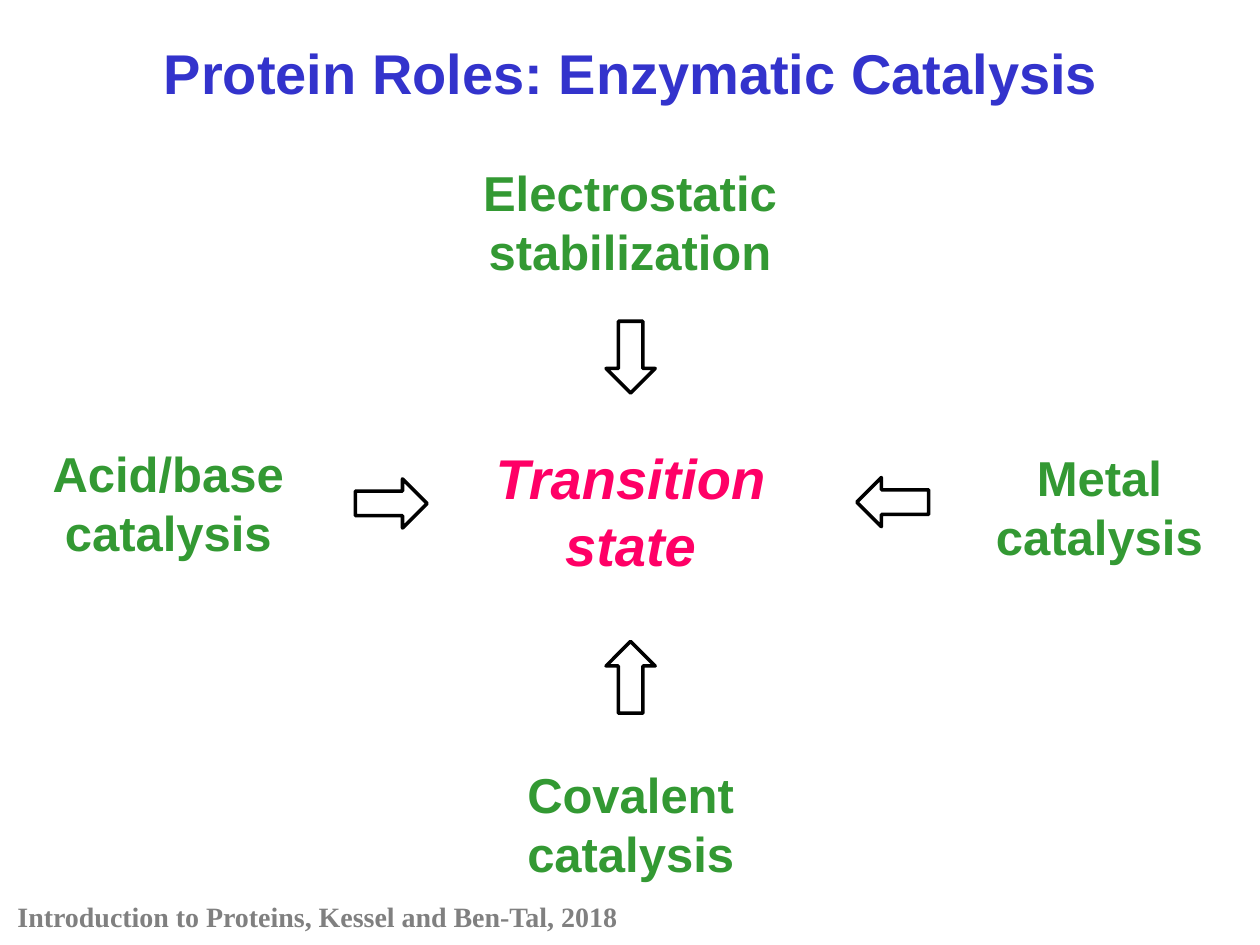
"""Build a slide on the four routes of enzymatic catalysis to the transition state."""
from pptx import Presentation
from pptx import util as u
from pptx.dml.color import RGBColor
from pptx.enum import shapes, text

theme = {
    "title": ("Arial", 32, "3333CC", False),
    "core": ("Arial", 32, "FF0066", True),
    "route": ("Arial", 28, "339933", False),
    "source": ("Times New Roman", 16, "808080", False),
    "fill": "FFFFFF",
    "line": "000000",
}

deck = Presentation()
deck.slide_width, deck.slide_height = u.Inches(10), u.Inches(7.5)
slide = deck.slides.add_slide(deck.slide_layouts[6])


def place(left, top, width, height):
    """Turn percent shares of the slide into lengths."""
    sides = (deck.slide_width, deck.slide_height) * 2
    return [int(side * share / 100) for side, share in zip(sides, (left, top, width, height))]


def label(words, style, box, align=text.PP_ALIGN.CENTER):
    """Add a bold wrapped label in a theme style."""
    frame = slide.shapes.add_textbox(*place(*box)).text_frame
    frame.word_wrap = True
    frame.auto_size = text.MSO_AUTO_SIZE.SHAPE_TO_FIT_TEXT
    para = frame.paragraphs[0]
    para.text, para.alignment = words, align
    font = para.font
    font.name, size, color, font.italic = theme[style]
    font.size, font.bold = u.Pt(size), True
    font.color.rgb = RGBColor.from_string(color)


label("Introduction to Proteins, Kessel and Ben-Tal, 2018", "source",
      (0.4, 94.53, 53.2, 4.93), text.PP_ALIGN.LEFT)
label("Transition state", "core", (33.8, 46.27, 32.5, 15.73))

routes = [
    ("Electrostatic stabilization", 35.2, 16.53, 29.6),
    ("Covalent catalysis", 38.3, 80.27, 23.5),
    ("Acid/base catalysis", 0.6, 46.27, 25.5),
    ("Metal catalysis", 74.5, 46.67, 25.5),
]
for words, left, top, width in routes:
    label(words, "route", (left, top, width, 13.87))

arrows = [(28.2, 50.67, 0), (68, 50.53, 180), (47.2, 35.2, 90), (47.2, 69.07, 270)]
for left, top, turn in arrows:
    arrow = slide.shapes.add_shape(shapes.MSO_SHAPE.RIGHT_ARROW, *place(left, top, 5.7, 5.2))
    arrow.rotation = turn
    arrow.shadow.inherit = False
    arrow.fill.solid()
    arrow.fill.fore_color.rgb = RGBColor.from_string(theme["fill"])
    arrow.line.color.rgb = RGBColor.from_string(theme["line"])
    arrow.line.width = u.Pt(2)

label("Protein Roles: Enzymatic Catalysis", "title", (1.7, 3.47, 96.8, 8.53))

deck.save("out.pptx")
